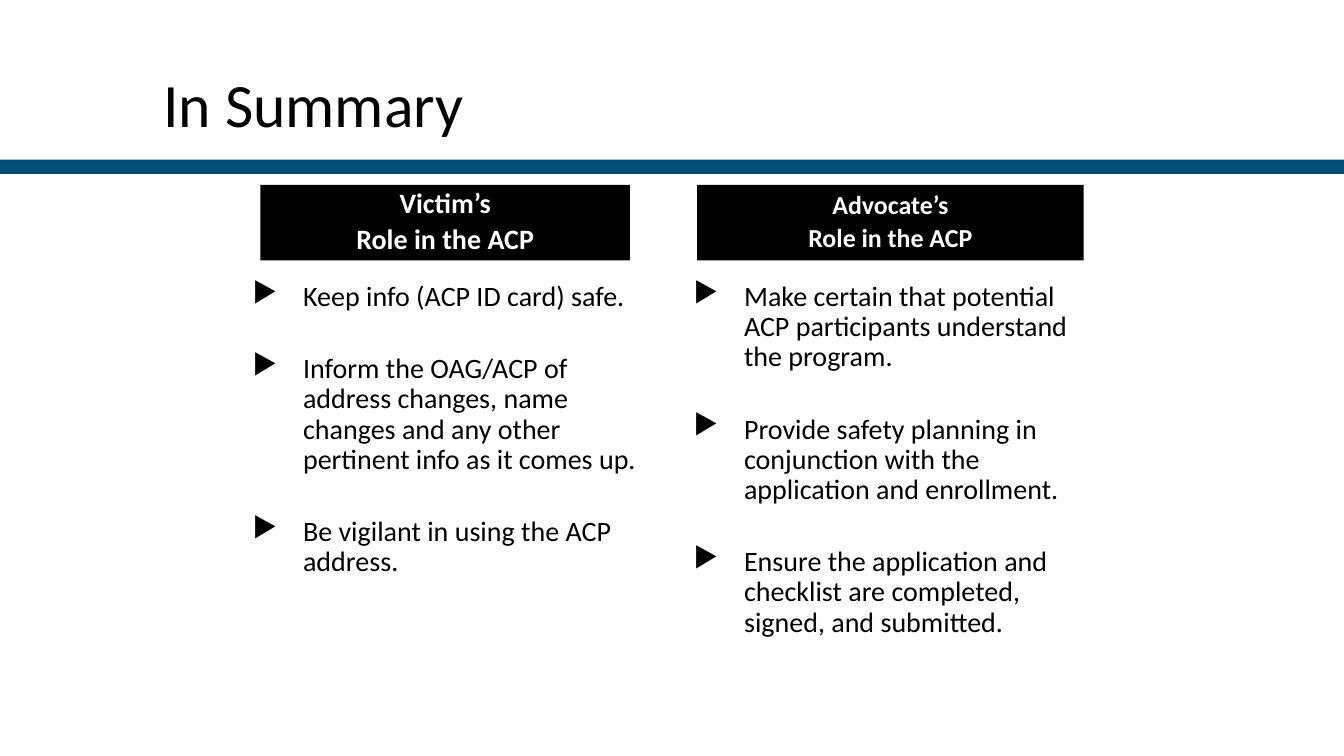
from lxml import etree
from pptx import Presentation
from pptx import util as u
from pptx.dml.color import RGBColor
from pptx.enum import shapes, text
from pptx.oxml import ns

BLACK = RGBColor(0x00, 0x00, 0x00)
WHITE = RGBColor(0xFF, 0xFF, 0xFF)
BLUE = RGBColor(0x00, 0x4D, 0x78)
COLS, ROWS = 160, 90
WIDTH, HEIGHT = u.Inches(13.33), u.Inches(7.5)


class Deck:
    font = "Calibri"
    title_size = 44
    body_size = 20

    def __init__(self):
        self.prs = Presentation()
        self.prs.slide_width, self.prs.slide_height = WIDTH, HEIGHT
        self.s = self.prs.slides.add_slide(self.prs.slide_layouts[5])

    def box(self, col, row, cols, rows):
        return (round(WIDTH * col / COLS), round(HEIGHT * row / ROWS),
                round(WIDTH * cols / COLS), round(HEIGHT * rows / ROWS))

    def add_text(self, p, words, size, color, spacing, bold=False):
        p.line_spacing = spacing
        r = p.add_run()
        r.text = words
        r.font.name, r.font.size, r.font.bold = self.font, u.Pt(size), bold
        r.font.color.rgb = color

    def paragraphs(self, tf, lines):
        for i, line in enumerate(lines):
            yield (tf.add_paragraph() if i else tf.paragraphs[0]), line, i

    def title(self, words, *grid):
        sp = self.s.shapes.title
        sp.left, sp.top, sp.width, sp.height = self.box(*grid)
        tf = sp.text_frame
        tf.vertical_anchor = text.MSO_ANCHOR.MIDDLE
        tf.auto_size = text.MSO_AUTO_SIZE.NONE
        p = tf.paragraphs[0]
        p.alignment = text.PP_ALIGN.LEFT
        self.add_text(p, words, self.title_size, BLACK, 1.5)

    def rect(self, color, *grid):
        sp = self.s.shapes.add_shape(shapes.MSO_SHAPE.RECTANGLE, *self.box(*grid))
        sp.shadow.inherit = False
        sp.fill.solid()
        sp.fill.fore_color.rgb = color
        sp.line.fill.background()
        return sp

    def header(self, lines, size, *grid):
        tf = self.rect(BLACK, *grid).text_frame
        tf.word_wrap = True
        tf.vertical_anchor = text.MSO_ANCHOR.MIDDLE
        for p, line, i in self.paragraphs(tf, lines):
            p.alignment = text.PP_ALIGN.CENTER
            if i:
                p.space_before = u.Pt(size * 0.2)
            self.add_text(p, line, size, WHITE, 0.9, bold=True)

    def bullets(self, lines, *grid):
        tf = self.s.shapes.add_textbox(*self.box(*grid)).text_frame
        tf.word_wrap = True
        for p, line, i in self.paragraphs(tf, lines):
            pPr = p._p.get_or_add_pPr()
            pPr.set("marL", str(u.Inches(0.5)))
            pPr.set("indent", str(-u.Inches(0.5)))
            etree.SubElement(pPr, ns.qn("a:buChar")).set("char", "▶")
            if i:
                p.space_before = u.Pt(30)
            self.add_text(p, line, self.body_size, BLACK, 0.9)


def main():
    deck = Deck()
    deck.rect(BLUE, 0, 19, COLS, 1.7)
    deck.title("In Summary", 18.25, 2.6, 122.9, 14.8)
    deck.bullets([
        "Keep info (ACP ID card) safe.",
        "Inform the OAG/ACP of address changes, name changes and any other "
        "pertinent info as it comes up.",
        "Be vigilant in using the ACP address.",
    ], 28.9, 33, 48.6, 42.7)
    deck.bullets([
        "Make certain that potential ACP participants understand the program.",
        "Provide safety planning in conjunction with the application and enrollment.",
        "Ensure the application and checklist are completed, signed, and submitted.",
    ], 81.4, 33, 48.6, 48)
    deck.header(["Victim’s", "Role in the ACP"], 20, 31, 22, 44, 9)
    deck.header(["Advocate’s", "Role in the ACP"], 18.5, 83, 22, 46, 9)
    deck.prs.save("out.pptx")


if __name__ == "__main__":
    main()
